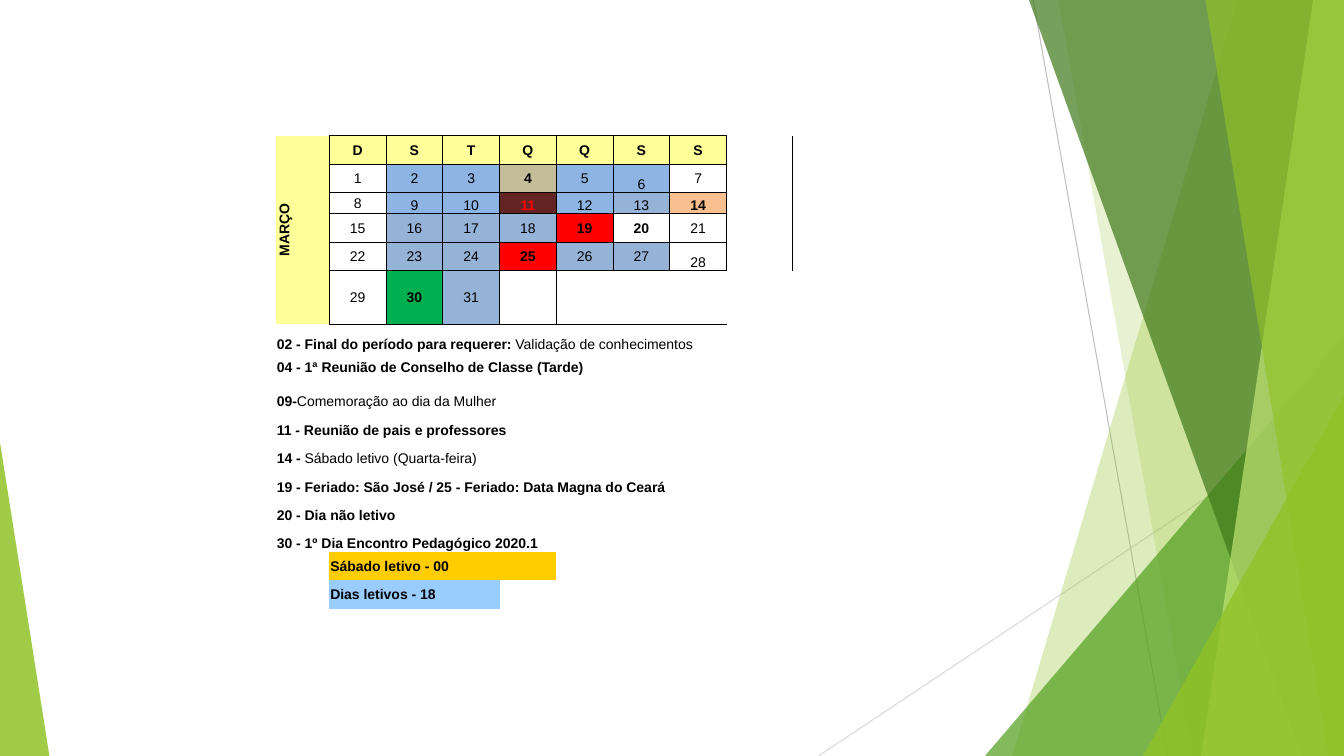
from lxml import etree
from pptx import Presentation
from pptx.dml.color import RGBColor
from pptx.enum.shapes import MSO_CONNECTOR, MSO_SHAPE
from pptx.enum.text import MSO_ANCHOR, PP_ALIGN
from pptx.oxml.ns import qn
from pptx.util import Pt

STRAIGHT = MSO_CONNECTOR.STRAIGHT
TRIANGLE = MSO_SHAPE.ISOSCELES_TRIANGLE
MIDDLE, BOTTOM = MSO_ANCHOR.MIDDLE, MSO_ANCHOR.BOTTOM
LEFT, CENTER = PP_ALIGN.LEFT, PP_ALIGN.CENTER

WIDTH, HEIGHT = 960, 540
NO_GRID_STYLE = "{2D5ABB26-0587-4C30-8999-92F81FD0307C}"

COLORS = {
    "lime": "90C226", "green": "54A021", "forest": "3F7819", "pale lime": "C0E474",
    "gray": "BFBFBF", "light gray": "D9D9D9", "black": "000000", "white": "FFFFFF",
    "header": "FFFF99", "early": "8DB4E2", "late": "95B3D7", "council": "C4BD97",
    "parents": "632523", "saturday": "FABF8F", "holiday": "FF0000",
    "meeting": "00B050", "saturday total": "FFCC00", "days total": "99CCFF",
}

COLUMNS = [38.2] + [40.56] * 7 + [46.8, 65.5, 46.2]
ROWS = [20.35, 20.35, 15, 20.35, 20.35, 38.2] + [20.35] * 10
LAST_WEEK = 5

SPECIAL_DAYS = {4: "council", 11: "parents", 14: "saturday", 19: "holiday",
                20: "white", 25: "holiday", 30: "meeting"}
LOW_DAYS = {6, 9, 10, 11, 12, 13, 14, 28}

# Columns spanned, bold text, regular text
NOTES = [
    (11, "02 - Final do período para requerer: ", "Validação de conhecimentos"),
    (9, "04 - 1ª Reunião de Conselho de Classe (Tarde)", ""),
    (6, "09-", "Comemoração ao dia da Mulher"),
    (7, "11 - Reunião de pais e professores", ""),
    (6, "14 -", " Sábado letivo (Quarta-feira)"),
    (10, "19 - Feriado: São José / 25 - Feriado: Data Magna do Ceará", ""),
    (4, "20 - Dia não letivo", ""),
    (7, "30 - 1º Dia Encontro Pedagógico 2020.1", ""),
]
TOTALS = [(4, "Sábado letivo - 00", "saturday total"),
          (3, "Dias letivos - 18", "days total")]


def rgb(name):
    return RGBColor.from_string(COLORS[name])


def add_line(page, start, end, color):
    line = page.shapes.add_connector(STRAIGHT, *map(Pt, start + end))
    line.line.color.rgb = rgb(color)
    line.line.width = Pt(0.75)
    etree.SubElement(line._element.spPr, qn("a:effectLst"))


def paint(shape, color, opacity):
    shape.shadow.inherit = False
    shape.line.fill.background()
    shape.fill.solid()
    shape.fill.fore_color.rgb = rgb(color)
    tint = shape._element.spPr.find(qn("a:solidFill"))[0]
    etree.SubElement(tint, qn("a:alpha"), val=str(opacity * 1000))


def add_band(page, top_left, bottom_left, color, opacity):
    """Full-height band from a slanted left edge to the right side of the slide."""
    builder = page.shapes.build_freeform(top_left, 0, scale=Pt(1))
    builder.add_line_segments([(WIDTH, 0), (WIDTH, HEIGHT), (bottom_left, HEIGHT)])
    paint(builder.convert_to_shape(), color, opacity)


def add_corner(page, left, top, right, apex, color, opacity):
    """Right triangle that stands on the bottom of the slide."""
    corner = page.shapes.add_shape(
        TRIANGLE, Pt(left), Pt(top), Pt(right - left), Pt(HEIGHT - top))
    corner.adjustments[0] = apex
    paint(corner, color, opacity)


def add_decoration(page):
    add_line(page, (738, 0), (834, HEIGHT), "gray")
    add_line(page, (WIDTH, 290), (584.6, HEIGHT), "light gray")
    add_band(page, 884, 723, "lime", 30)
    add_band(page, 756, 852, "lime", 20)
    add_corner(page, 703.5, 240, WIDTH, 1, "green", 72)
    add_band(page, 735, 929.5, "forest", 70)
    add_band(page, 938, 858, "pale lime", 70)
    add_band(page, 861, 949, "lime", 65)
    add_corner(page, 816.5, 283, WIDTH, 1, "lime", 80)
    add_corner(page, 0, 316, 35.3, 0, "lime", 85)


def in_calendar(row, column):
    last_column = 3 if row == LAST_WEEK else 7
    return 0 <= row <= LAST_WEEK and 1 <= column <= last_column


def add_borders(cell, row, column):
    """Rule every edge that touches a day, except below the last week."""
    here = in_calendar(row, column)
    edges = {
        "a:lnL": here or in_calendar(row, column - 1),
        "a:lnR": here or in_calendar(row, column + 1),
        "a:lnT": row <= LAST_WEEK and (here or in_calendar(row - 1, column)),
        "a:lnB": row < LAST_WEEK and (here or in_calendar(row + 1, column)),
    }
    properties = cell._tc.get_or_add_tcPr()
    for tag, ruled in edges.items():
        if ruled:
            edge = etree.SubElement(properties, qn(tag), w=str(Pt(0.5)))
            solid = etree.SubElement(edge, qn("a:solidFill"))
            etree.SubElement(solid, qn("a:srgbClr"), val=COLORS["black"])


def prepare_cell(cell, row, column):
    add_borders(cell, row, column)
    cell.fill.background()
    cell.margin_left = cell.margin_right = cell.margin_top = Pt(0.72)
    cell.margin_bottom = 0
    para = cell.text_frame.paragraphs[0]
    para.font.name, para.font.size = "Arial", Pt(10)
    etree.SubElement(para._p, qn("a:endParaRPr"), sz="1000")


def write_cell(cell, bold="", regular="", fill=None, color="black",
               align=LEFT, anchor=MIDDLE):
    if fill:
        cell.fill.solid()
        cell.fill.fore_color.rgb = rgb(fill)
    cell.vertical_anchor = anchor
    para = cell.text_frame.paragraphs[0]
    para.alignment = align
    para.font.color.rgb = rgb(color)
    for text, is_bold in ((bold, True), (regular, False)):
        if text:
            span = para.add_run()
            span.text = text
            span.font.bold = is_bold


def add_table(page):
    frame = page.shapes.add_table(len(ROWS), len(COLUMNS), Pt(197), Pt(97),
                                  Pt(sum(COLUMNS)), Pt(sum(ROWS)))
    table = frame.table
    table.first_row = table.horz_banding = False
    table._tbl.tblPr.find(qn("a:tableStyleId")).text = NO_GRID_STYLE
    for column, width in zip(table.columns, COLUMNS):
        column.width = Pt(width)
    for row, height in zip(table.rows, ROWS):
        row.height = Pt(height)
    for row in range(len(ROWS)):
        for column in range(len(COLUMNS)):
            prepare_cell(table.cell(row, column), row, column)
    return table


def fill_calendar(table):
    month = table.cell(0, 0)
    month.merge(table.cell(LAST_WEEK, 0))
    month._tc.get_or_add_tcPr().set("vert", "vert270")
    write_cell(month, "MARÇO", fill="header", align=CENTER)
    for column, letter in enumerate("DSTQQSS", start=1):
        write_cell(table.cell(0, column), letter, fill="header", align=CENTER)
    for day in range(1, 32):
        week, weekday = divmod(day - 1, 7)
        if weekday == 0:
            fill = None
        elif weekday == 6:
            fill = "white"
        else:
            fill = "early" if day <= 12 else "late"
        special = day in SPECIAL_DAYS
        write_cell(table.cell(week + 1, weekday + 1),
                   bold=str(day) if special else "",
                   regular="" if special else str(day),
                   fill=SPECIAL_DAYS.get(day, fill),
                   color="holiday" if day == 11 else "black",
                   align=CENTER, anchor=BOTTOM if day in LOW_DAYS else MIDDLE)


def fill_notes(table):
    first = LAST_WEEK + 1
    for row, (columns, bold, regular) in enumerate(NOTES, start=first):
        note = table.cell(row, 0)
        note.merge(table.cell(row, columns - 1))
        anchor = MIDDLE if bold.startswith("04") else BOTTOM
        write_cell(note, bold, regular, anchor=anchor)
    for row, (columns, text, fill) in enumerate(TOTALS, start=first + len(NOTES)):
        total = table.cell(row, 1)
        total.merge(table.cell(row, columns))
        write_cell(total, text, fill=fill)


def main():
    deck = Presentation()
    deck.slide_width, deck.slide_height = Pt(WIDTH), Pt(HEIGHT)
    page = deck.slides.add_slide(deck.slide_layouts[6])
    add_decoration(page)
    table = add_table(page)
    fill_calendar(table)
    fill_notes(table)
    deck.save("out.pptx")


if __name__ == "__main__":
    main()
